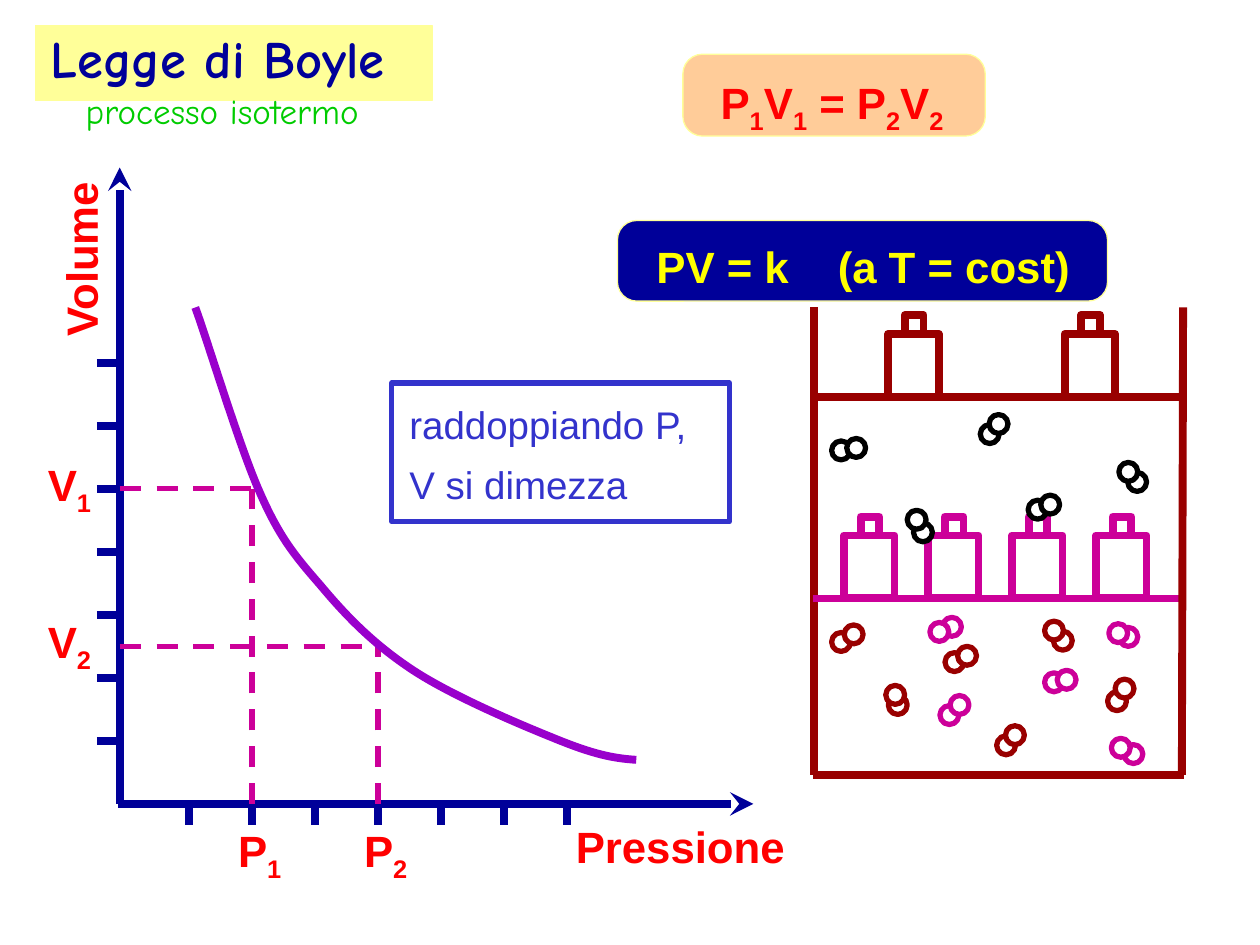
from lxml import etree
from pptx import Presentation
from pptx.dml.color import RGBColor
from pptx.enum.dml import MSO_LINE
from pptx.enum.shapes import MSO_CONNECTOR, MSO_SHAPE
from pptx.enum.text import MSO_ANCHOR, MSO_AUTO_SIZE, PP_ALIGN
from pptx.oxml.ns import qn
from pptx.util import Pt

SCALE = 9144  # EMU in one px, 100 px to the inch
RECT, ROUND, OVAL = MSO_SHAPE.RECTANGLE, MSO_SHAPE.ROUNDED_RECTANGLE, MSO_SHAPE.OVAL
STRAIGHT, DASH = MSO_CONNECTOR.STRAIGHT, MSO_LINE.DASH
TOP, LEFT, GROW = MSO_ANCHOR.TOP, PP_ALIGN.LEFT, MSO_AUTO_SIZE.SHAPE_TO_FIT_TEXT

NAVY, RED, PINK, BROWN = "000099", "FF0000", "CC0099", "990000"
PURPLE, BLUE, CREAM, PEACH = "9900CC", "3333CC", "FFFF99", "FFCC99"
YELLOW, GREEN, WHITE, BLACK = "FFFF00", "00CC00", "FFFFFF", "000000"


def px(*nums):
    return [round(n * SCALE) for n in nums]


def rgb(code):
    return RGBColor.from_string(code)


def shape(shapes, kind, box, fill, edge, width):
    item = shapes.add_shape(kind, *px(*box))
    item.shadow.inherit = False
    if fill:
        item.fill.solid()
        item.fill.fore_color.rgb = rgb(fill)
    else:
        item.fill.background()
    item.line.color.rgb = rgb(edge)
    item.line.width = Pt(width)
    return item


def line(shapes, start, end, color, width=4.5, dash=False, arrow=False):
    item = shapes.add_connector(STRAIGHT, *px(*start, *end))
    item.line.color.rgb = rgb(color)
    item.line.width = Pt(width)
    if dash:
        item.line.dash_style = DASH
    if arrow:
        etree.SubElement(item.line._get_or_add_ln(), qn("a:tailEnd"), type="stealth")
    etree.SubElement(item._element.spPr, qn("a:effectLst"))


def frame(item):
    body = item.text_frame
    body.margin_left = body.margin_right = px(6)[0]
    body.margin_top = body.margin_bottom = px(3)[0]
    body.word_wrap = False
    body.auto_size = GROW
    body.vertical_anchor = TOP
    return body


def write(para, words, size, color, bold=True, font="Arial"):
    """Add runs split at each bar; every second one is a subscript."""
    para.alignment = LEFT
    for i, part in enumerate(words.split("|")):
        run = para.add_run()
        run.text = part
        run.font.size = Pt(size)
        run.font.name = font
        run.font.bold = bold
        run.font.color.rgb = rgb(color)
        if i % 2:
            run.font._element.set("baseline", "-25000")


def label(shapes, box, words, color=RED, size=25, bold=True, space=None):
    item = shapes.add_textbox(*px(*box))
    body = frame(item)
    for i, row in enumerate(words.split("\n")):
        para = body.add_paragraph() if i else body.paragraphs[0]
        if space:
            para.line_spacing = space
        write(para, row, size, color, bold)
    return item


def heading(slide, x, y):
    shape(slide.shapes, RECT, (x, y, 315, 60), CREAM, CREAM, 0.75)
    title = slide.shapes.title
    slide.shapes._spTree.append(title._element)  # in front of its band
    title.left, title.top, title.width, title.height = px(x + 6, y - 2, 304, 89)
    body = frame(title)
    write(body.paragraphs[0], "Legge di Boyle", 30, NAVY, font="Comic Neue")
    para = body.add_paragraph()
    para._p.get_or_add_pPr().set("marL", str(px(28)[0]))
    write(para, "processo isotermo", 20, GREEN, False, "Comic Neue")


def panel(shapes, box, fill, words, color, inset, stop=None):
    x, y, w, h = box
    shape(shapes, ROUND, box, fill, CREAM, 0.75).adjustments[0] = 0.24
    item = label(shapes, (x + inset, y, w - 2 * inset + 15, 55), words, color, space=1.3)
    if stop:
        props = item.text_frame.paragraphs[0]._p.get_or_add_pPr()
        tabs = etree.SubElement(props, qn("a:tabLst"))
        etree.SubElement(tabs, qn("a:tab"), pos=str(px(stop)[0]), algn="l")


def curve(shapes, points):
    """Draw a Bezier chain: a start, then two handles and an end per piece."""
    maker = shapes.build_freeform(*points[0], scale=SCALE)
    maker.add_line_segments(points[1:], close=False)
    item = maker.convert_to_shape()
    item.shadow.inherit = False
    item.fill.background()
    item.line.color.rgb = rgb(PURPLE)
    item.line.width = Pt(4.5)
    trail = next(item._element.iter(qn("a:path")))
    legs = trail.findall(qn("a:lnTo"))
    for i in range(0, len(legs), 3):
        bend = etree.SubElement(trail, qn("a:cubicBezTo"))
        for leg in legs[i:i + 3]:
            bend.append(leg[0])
            trail.remove(leg)


def graph(shapes, x, y):
    """Plot volume against pressure, with the axes meeting at x, y."""
    line(shapes, (x, y), (x, y - 505), NAVY, arrow=True)
    line(shapes, (x - 1, y), (x + 503, y), NAVY, arrow=True)
    for i in range(7):
        up, along = y - 50 - 50 * i, x + 55 + 50 * i
        line(shapes, (x - 18, up), (x - 1, up), NAVY)
        line(shapes, (along, y), (along, y + 17), NAVY)
    for i, (dx, dy) in enumerate([(105, 250), (205, 125)], 1):
        line(shapes, (x + dx, y), (x + dx, y - dy), PINK, 3, dash=True)
        line(shapes, (x, y - dy), (x + dx, y - dy), PINK, 3, dash=True)
        label(shapes, (x - 63, y - dy - 28, 48, 48), f"V|{i}")
        label(shapes, (x + dx - 17, y + 13, 48, 48), f"P|{i}")
    knots = [(60, 394), (69, 370), (94, 287), (110, 250), (126, 213), (138, 198),
             (159, 174), (179, 150), (201, 127), (233, 106), (265, 85), (320, 62),
             (350, 50), (380, 38), (395, 36), (410, 35)]
    curve(shapes, [(x + dx, y - dy) for dx, dy in knots])
    label(shapes, (x + 356, y + 10, 179, 48), "Pressione")
    label(shapes, (x - 100, y - 458, 138, 48), "Volume").rotation = 270


def weight(shapes, x, base, color):
    group = shapes.add_group_shape().shapes
    shape(group, RECT, (x, base - 50, 40, 50), None, color, 4.5)
    shape(group, RECT, (x + 13, base - 65, 15, 15), None, color, 4.5)


def vessel(shapes, x, y):
    low, high, floor, right = y + 231, y + 71, y + 371, x + 295
    line(shapes, (x + 1, floor), (x + 1, y), BROWN)
    line(shapes, (x, low), (right, low), PINK)
    for dx in (60, 200):
        weight(shapes, x + dx, high, BROWN)
    for i in range(4):
        weight(shapes, x + 25 + i * 200 / 3, low, PINK)
    for level in (high, floor):
        line(shapes, (x, level), (right, level), BROWN)
    line(shapes, (right - 2, floor), (right - 1, y), BROWN)
    pairs = {  # back atom, then front atom
        BROWN: [(60, 308, 58, 300), (15, 258, 25, 252), (191, 257, 184, 249),
                (146, 340, 153, 332), (234, 305, 240, 295), (105, 274, 115, 269)],
        PINK: [(103, 246, 93, 250), (101, 316, 109, 308), (184, 290, 194, 288),
               (247, 347, 237, 342), (243, 254, 235, 251)],
        BLACK: [(15, 106, 27, 104), (80, 171, 75, 161), (250, 131, 243, 123),
                (171, 153, 181, 149), (133, 93, 140, 85)],
    }
    for color, spots in pairs.items():
        for ax, ay, bx, by in spots:
            for dx, dy in ((ax, ay), (bx, by)):
                shape(shapes, OVAL, (x + dx, y + dy, 15, 15), WHITE, color, 3)


def note(shapes, x, y):
    label(shapes, (x + 8, y, 243, 97), "raddoppiando P,\nV si dimezza", BLUE, 22, False, 1.3)
    shape(shapes, RECT, (x, y, 268, 110), None, BLUE, 3)


def main():
    deck = Presentation()
    deck.slide_width, deck.slide_height = px(1000, 750)
    slide = deck.slides.add_slide(deck.slide_layouts[5])
    shapes = slide.shapes
    heading(slide, 28, 20)
    graph(shapes, 95, 638)
    vessel(shapes, 645, 244)
    panel(shapes, (542, 43, 240, 65), PEACH, "P|1|V|1| = P|2|V|2", RED, 24)
    panel(shapes, (490, 175, 389, 64), NAVY, "PV = k\t(a T = cost)", YELLOW, 25, 144)
    note(shapes, 311, 304)
    deck.save("out.pptx")


if __name__ == "__main__":
    main()
